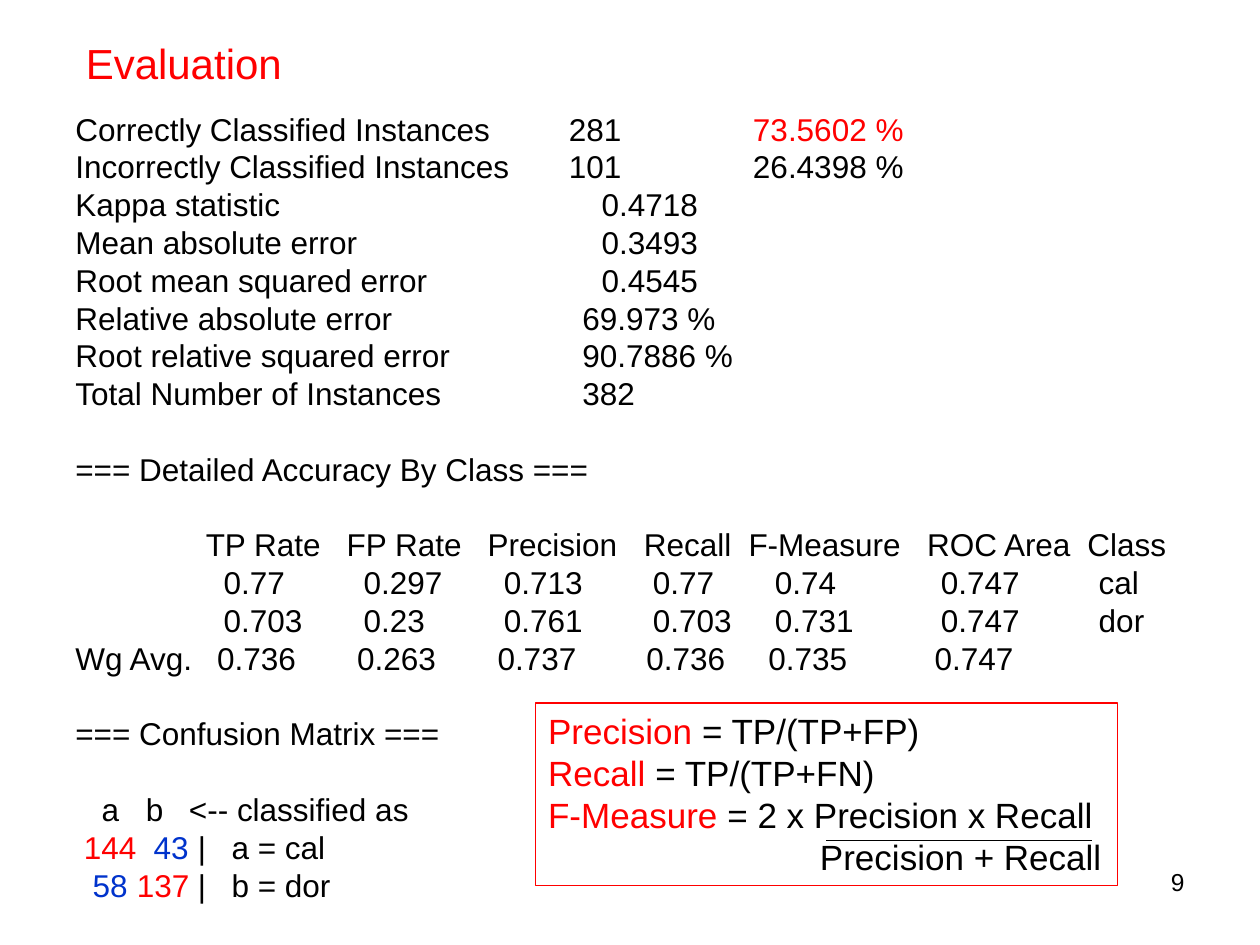
from lxml.etree import SubElement
from pptx import Presentation
from pptx.dml.color import RGBColor as RGB
from pptx.enum.shapes import MSO_CONNECTOR as Connector, MSO_SHAPE as Shape
from pptx.enum.text import MSO_ANCHOR as Anchor, PP_ALIGN as Align
from pptx.oxml.ns import qn
from pptx.util import Cm, Pt

THEME = {
    "font": "Arial",
    "black": RGB(0, 0, 0), "red": RGB(255, 0, 0), "blue": RGB(0, 0x33, 0xCC),
    "title": 24, "body": 18, "formula": 20, "number": 14,
    "leading": 1.2, "line": 0.75,
}

# Tab stops in cm, measured from the left edge of the text
COUNT, ERROR, PERCENT = [9.95, 13.66], [10.61], [10.22]
RATE_HEAD = [2.63, 5.47, 8.31, 11.46, 13.57, 17.17, 20.4]
RATES = [2.99, 5.81, 8.64, 11.64, 14.1, 17.45, 20.63]
AVERAGES = [stop - 0.13 for stop in RATES]
MATRIX_HEAD = [0.53, 1.42, 2.29]
MATRIX_CAL, MATRIX_DOR = [0.17, 1.58, 2.47, 3.15], [0.35, 1.24, 2.47, 3.15]

# Each block is a list of lines: (tab stops, cells); a cell is text or (text, colour)
SUMMARY = [
    (COUNT, ["Correctly Classified Instances", "281", ("73.5602 %", "red")]),
    (COUNT, ["Incorrectly Classified Instances", "101", "26.4398 %"]),
    (ERROR, ["Kappa statistic", "0.4718"]),
    (ERROR, ["Mean absolute error", "0.3493"]),
    (ERROR, ["Root mean squared error", "0.4545"]),
    (PERCENT, ["Relative absolute error", "69.973 %"]),
    (PERCENT, ["Root relative squared error", "90.7886 %"]),
    (PERCENT, ["Total Number of Instances", "382"]),
]
ACCURACY = [
    (RATE_HEAD, ["", "TP Rate", "FP Rate", "Precision", "Recall", "F-Measure",
                 "ROC Area", "Class"]),
    (RATES, ["", "0.77", "0.297", "0.713", "0.77", "0.74", "0.747", "cal"]),
    (RATES, ["", "0.703", "0.23", "0.761", "0.703", "0.731", "0.747", "dor"]),
    (AVERAGES, ["Wg Avg.", "0.736", "0.263", "0.737", "0.736", "0.735", "0.747"]),
]
CONFUSION = [
    (MATRIX_HEAD, ["", "a", "b", "<-- classified as"]),
    (MATRIX_CAL, ["", ("144", "red"), ("43", "blue"), "|", "a = cal"]),
    (MATRIX_DOR, ["", ("58", "blue"), ("137", "red"), "|", "b = dor"]),
]
RESULTS = [
    SUMMARY,
    [([], ["=== Detailed Accuracy By Class ==="])],
    ACCURACY,
    [([], ["=== Confusion Matrix ==="])],
    CONFUSION,
]
FORMULAS = [
    ("Precision", " = TP/(TP+FP)"),
    ("Recall", " = TP/(TP+FN)"),
    ("F-Measure", " = 2 x Precision x Recall"),
]
DENOMINATOR, DENOMINATOR_STOP = "Precision + Recall", 5.48


def add_run(paragraph, text, size, colour="black"):
    run = paragraph.add_run()
    run.text = text
    run.font.name = THEME["font"]
    run.font.size = Pt(THEME[size])
    run.font.color.rgb = THEME[colour]


def set_line(paragraph, size, stops=(), gap=False):
    pitch = Pt(THEME[size] * THEME["leading"])
    paragraph.line_spacing = pitch
    paragraph.space_before = pitch if gap else Pt(0)
    if stops:
        tabs = SubElement(paragraph._p.get_or_add_pPr(), qn("a:tabLst"))
        for stop in stops:
            SubElement(tabs, qn("a:tab"), pos=str(int(Cm(stop))), algn="l")


def next_paragraph(frame):
    first = frame.paragraphs[0]
    return frame.add_paragraph() if first.runs else first


def add_label(slide, box, text, size, colour, align):
    frame = slide.shapes.add_textbox(*map(Cm, box)).text_frame
    frame.word_wrap = True
    paragraph = frame.paragraphs[0]
    paragraph.alignment = align
    set_line(paragraph, size)
    add_run(paragraph, text, size, colour)


def add_results(slide):
    frame = slide.shapes.add_textbox(Cm(1.27), Cm(1.07), Cm(22.73), Cm(17.45)).text_frame
    frame.word_wrap = False
    frame.margin_top = Cm(1.14)
    for b, block in enumerate(RESULTS):
        for i, (stops, cells) in enumerate(block):
            paragraph = next_paragraph(frame)
            set_line(paragraph, "body", stops, gap=b > 0 and i == 0)
            for c, cell in enumerate(cells):
                text, colour = cell if isinstance(cell, tuple) else (cell, "black")
                tab = "\t" if c else ""
                if tab + text:
                    add_run(paragraph, tab + text, "body", colour)


def add_formulas(slide):
    box = slide.shapes.add_shape(Shape.RECTANGLE, Cm(10.8), Cm(14.17), Cm(11.73), Cm(3.68))
    box.shadow.inherit = False
    box.fill.background()
    box.line.color.rgb = THEME["red"]
    box.line.width = Pt(THEME["line"])
    frame = box.text_frame
    frame.word_wrap = False
    frame.vertical_anchor = Anchor.TOP
    for measure, formula in FORMULAS:
        paragraph = next_paragraph(frame)
        paragraph.alignment = Align.LEFT
        set_line(paragraph, "formula")
        add_run(paragraph, measure, "formula", "red")
        add_run(paragraph, formula, "formula")
    paragraph = next_paragraph(frame)
    paragraph.alignment = Align.LEFT
    set_line(paragraph, "formula", [DENOMINATOR_STOP])
    add_run(paragraph, "\t" + DENOMINATOR, "formula")

    # Fraction bar
    bar = slide.shapes.add_connector(
        Connector.STRAIGHT, Cm(16.66), Cm(16.94), Cm(22.02), Cm(16.94))
    bar.line.color.rgb = THEME["black"]
    bar.line.width = Pt(THEME["line"])
    SubElement(bar._element.spPr, qn("a:effectLst"))


def main():
    deck = Presentation()
    deck.slide_width, deck.slide_height = Cm(25.4), Cm(19.05)
    slide = deck.slides.add_slide(deck.slide_layouts[6])
    # Page number, results, formulas, title
    add_label(slide, (18.21, 17.35, 5.92, 1.32), "9", "number", "black", Align.RIGHT)
    add_results(slide)
    add_formulas(slide)
    add_label(slide, (1.48, 0.64, 4.52, 1.3), "Evaluation", "title", "red", Align.LEFT)
    deck.save("out.pptx")


if __name__ == "__main__":
    main()
